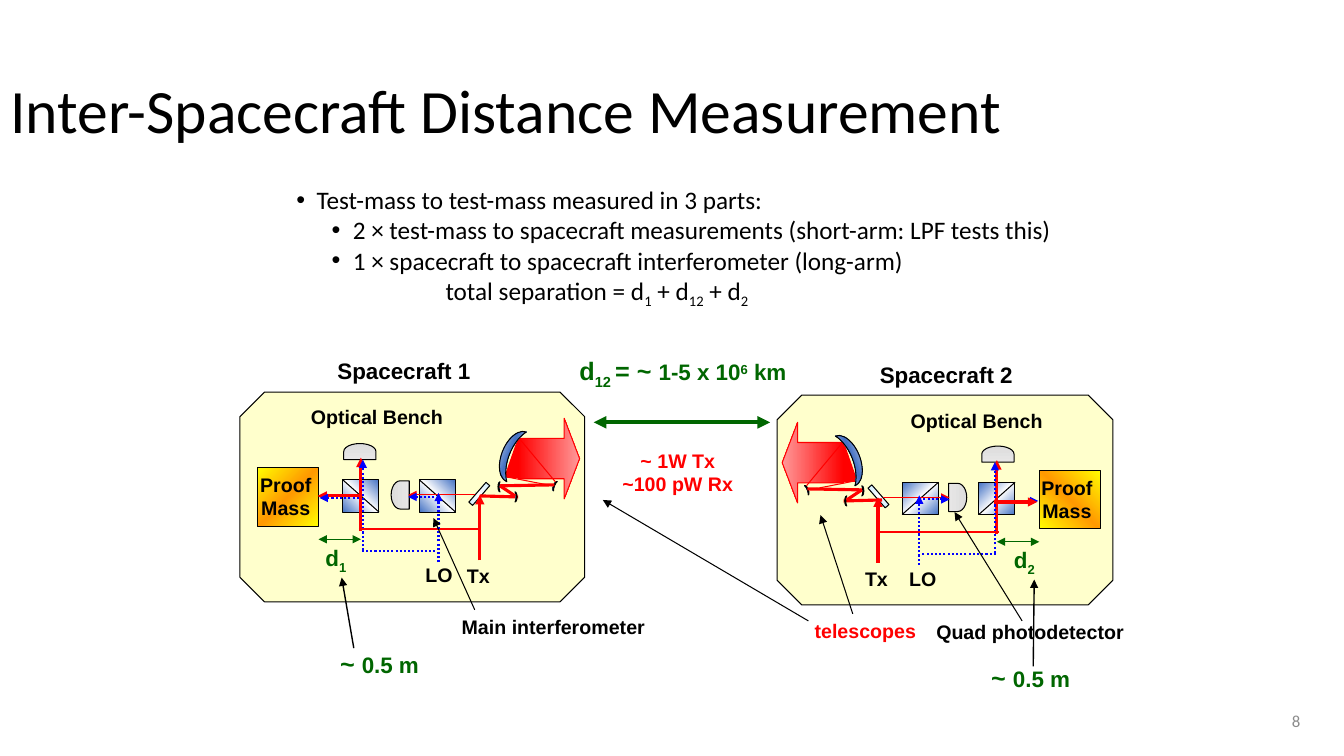
from dataclasses import dataclass

from lxml.etree import SubElement
from pptx import Presentation
from pptx.dml.color import RGBColor
from pptx.enum.dml import MSO_LINE
from pptx.enum.shapes import MSO_CONNECTOR, MSO_SHAPE
from pptx.enum.text import MSO_ANCHOR, MSO_AUTO_SIZE, PP_ALIGN
from pptx.oxml.ns import qn
from pptx.util import Inches, Length, Pt

CELL = 0.1  # grid of 133.3 columns by 75 rows, in inches


@dataclass(frozen=True)
class Theme:
    ink: str = "000000"
    red: str = "FF0000"
    blue: str = "0000FF"
    green: str = "006600"
    grey: str = "8C8C8C"
    hull: str = "FFFFCC"
    body_font: str = "Calibri"
    label_font: str = "Arial"
    title: int = 44
    large: int = 18
    medium: int = 16
    small: int = 14
    number: int = 12


THEME = Theme()


@dataclass(frozen=True)
class Paint:
    colors: tuple[str, ...]
    angle: int = 0


@dataclass(frozen=True)
class Stroke:
    color: str
    width: float = 0.75
    tail: bool = False
    head: bool = False
    dotted: bool = False


@dataclass(frozen=True)
class Beam:
    start: tuple[float, float]
    end: tuple[float, float]
    stroke: Stroke


@dataclass(frozen=True)
class Part:
    kind: MSO_SHAPE
    box: tuple[float, float, float, float]
    paint: Paint
    outline: str | None = THEME.ink
    turn: float = 0
    flip: bool = False
    adjust: tuple[float, ...] = ()


@dataclass(frozen=True)
class Span:
    text: str
    size: int | None = None
    baseline: int = 0


@dataclass(frozen=True)
class Label:
    box: tuple[float, float, float, float]
    lines: tuple[tuple[Span, ...], ...]
    color: str = THEME.ink
    size: int = THEME.small
    align: PP_ALIGN = PP_ALIGN.CENTER
    font: str = THEME.label_font
    bold: bool = True
    wrap: bool = True
    anchor: MSO_ANCHOR = MSO_ANCHOR.TOP


@dataclass(frozen=True)
class View:
    """Where a group is drawn: mirrored in x about axis / 2 and lowered by drop."""
    axis: float | None = None
    drop: float = 0


STEEL = Paint(("E7E6E6", "DDDDDD"))
GOLD = Paint(("FFFF00", "FF9900", "FFFF00"), 45)
GLASS = Paint(("4472C4", "FFFFFF", "4472C4"), 315)
MIRROR = Paint(("FFFFFF", "4472C4", "FFFFFF"))
PLATE = Paint(("CCECFF", "FFFFFF", "CCECFF"), 90)
GLOW = Paint(("FF0000", "FF9999"))

EDGE, POINTER = Stroke(THEME.ink), Stroke(THEME.ink, tail=True)
RANGE_POINTER = Stroke(THEME.ink, 1, tail=True)
RAY, RAY_ARROW = Stroke(THEME.red), Stroke(THEME.red, tail=True)
LASER, LASER_ARROW = Stroke(THEME.red, 2.25), Stroke(THEME.red, 2.25, tail=True)
LASER_FEED = Stroke(THEME.red, 1.5)
LOCAL = Stroke(THEME.blue, 1.5, dotted=True)
LOCAL_ARROW = Stroke(THEME.blue, 1.5, tail=True, dotted=True)
SHORT_ARM = Stroke(THEME.green, tail=True, head=True)
LONG_ARM = Stroke(THEME.green, 3, tail=True, head=True)

DELAY, MOON = MSO_SHAPE.FLOWCHART_DELAY, MSO_SHAPE.MOON
BENCH: list[Part | Beam] = [
    Part(MSO_SHAPE.RECTANGLE, (47.3, 47.7, 0.5, 2.6), PLATE, turn=41),
    Part(DELAY, (38.8, 47.7, 1.8, 2.8), STEEL, turn=180),
    Part(DELAY, (34.9, 43.2, 1.6, 3.2), STEEL, turn=270),
    Part(MSO_SHAPE.RECTANGLE, (25.5, 46.4, 6.1, 5.8), GOLD),
    *(item for left in (34, 41.6) for item in (
        Part(MSO_SHAPE.RECTANGLE, (left, 47.6, 3.6, 3.2), GLASS),
        Beam((left, 47.6), (left + 3.6, 50.8), EDGE))),
    Beam((47.6, 55.6), (47.6, 49.1), LASER_ARROW),
    Beam((35.8, 52.7), (35.8, 45.4), LASER_ARROW),
    Beam((36, 54.6), (36, 45.6), LOCAL_ARROW),
    Beam((47.1, 49.1), (40.5, 49.1), RAY_ARROW),
    Beam((35.6, 52.5), (47.4, 52.5), LASER_FEED),
    Beam((43.5, 55.8), (43.5, 48.9), LOCAL_ARROW),
    Beam((35.9, 54.7), (43.4, 54.7), LOCAL),
    Beam((43.1, 49.3), (40.5, 49.3), LOCAL_ARROW),
    Beam((31.6, 53.5), (35.8, 53.5), SHORT_ARM),
]
TELESCOPE: list[Part | Beam] = [
    Part(MSO_SHAPE.RIGHT_ARROW, (51.4, 41.5, 6.1, 8), GLOW, THEME.red, adjust=(0.5, 0.25)),
    Part(MOON, (54.9, 47.7, 0.2, 1), MIRROR, turn=21.5),
    Beam((51.6, 43.6), (55.1, 47.8), RAY),
    Beam((50.2, 47.3), (54.8, 48.2), RAY),
    Beam((47.6, 49.2), (51.4, 49.3), LASER),
    Part(MOON, (51.1, 48.8, 0.2, 1), MIRROR, flip=True),
    Part(MOON, (49.4, 47.8, 0.2, 1), MIRROR),
    Beam((49.6, 48.2), (51.1, 49.2), LASER),
    Beam((49.6, 48.2), (55, 48.1), LASER),
    Part(MSO_SHAPE.RIGHT_TRIANGLE, (50, 43.4, 1.4, 4), Paint((THEME.red,)), None, flip=True),
    Part(MOON, (49.8, 42.4, 1.5, 5.3), MIRROR, turn=21.5),
]
HULLS = [Part(MSO_SHAPE.OCTAGON, box, Paint((THEME.hull,)), adjust=(0.117,))
         for box in ((23.8, 38.9, 34.2, 20.8), (77.1, 39.2, 33.3, 20.8))]
PROOF_BEAMS = [
    Beam((35.8, 49.2), (31.5, 49.2), LASER_ARROW), Beam((35.6, 49.4), (31.7, 49.4), LOCAL_ARROW),
    Beam((99.1, 49.7), (103, 49.7), LOCAL_ARROW), Beam((98.6, 49.8), (102.9, 49.8), LASER_ARROW),
]
CALLOUTS = [
    Beam((58.9, 41.9), (76.4, 41.9), LONG_ARM), Beam((47.1, 60.5), (43, 51.4), POINTER),
    Beam((80.2, 61.6), (59.8, 49.6), POINTER), Beam((84.6, 60.9), (81.4, 51.1), POINTER),
    Beam((101.4, 61.6), (94.7, 50.8), POINTER), Beam((35.1, 64.3), (33.9, 57.3), RANGE_POINTER),
    Beam((102.5, 66.1), (102.6, 57.5), RANGE_POINTER),
]


def words(*lines: str) -> tuple[tuple[Span, ...], ...]:
    return tuple((Span(line),) for line in lines)


LABELS = [
    Label((53.9, 34.8, 27.7, 5.8), ((Span("d"), Span("12 ", baseline=-25), Span("= ~ "),
          Span("1-5 x 10", THEME.medium), Span("6", THEME.medium, 30),
          Span(" km", THEME.medium)),), THEME.green, THEME.large),
    Label((41, 60.5, 27.8, 6), words("Main interferometer")),
    Label((91.2, 61, 22, 3.3), words("Quad photodetector")),
    Label((79.6, 60.9, 12.5, 3.4), words("telescopes"), THEME.red),
    Label((60.6, 44, 13.3, 3.5), words("~ 1W Tx", "~100 pW Rx"), THEME.red),
    *(Label((left, top, 15.4, 3.7), words(f"Spacecraft {craft}"), size=THEME.medium,
            align=PP_ALIGN.LEFT, wrap=False)
      for craft, left, top in ((1, 32.5, 34.9), (2, 86.3, 35.3))),
    *(Label((left, top, 4.6, 3.6), ((Span("d"), Span(craft, baseline=-25)),), THEME.green,
            THEME.medium, PP_ALIGN.LEFT)
      for craft, left, top in (("1", 31.3, 53.5), ("2", 99.6, 53.7))),
    *(Label((left, top, 9.1, 5.5), words("Proof Mass")) for left, top in ((23.8, 46.4), (101.3, 46.7))),
    *(Label((left, top, 16, 3.9), words("Optical Bench")) for left, top in ((29.4, 39.7), (88.9, 40.1))),
    *(Label((left, top, 11.1, 3.4), words(name)) for name, left, top in (
        ("LO", 38, 55.4), ("Tx", 41.9, 55.5), ("Tx", 81.4, 55.8), ("LO", 86, 55.8))),
    *(Label((left, top, 10.3, 5.8), ((Span("~ "), Span("0.5 m", THEME.medium)),), THEME.green,
            THEME.large) for left, top in ((32.5, 63.8), (97.1, 65.2))),
    Label((100, 69.5, 30, 4), words("8"), THEME.grey, THEME.number, PP_ALIGN.RIGHT,
          THEME.body_font, False, anchor=MSO_ANCHOR.MIDDLE),
]


def grid(*cells: float) -> list[Length]:
    return [Inches(cell * CELL) for cell in cells]


def rgb(color: str) -> RGBColor:
    return RGBColor.from_string(color)


def apply_paint(fill, paint: Paint) -> None:
    if len(paint.colors) == 1:
        fill.solid()
        fill.fore_color.rgb = rgb(paint.colors[0])
        return
    fill.gradient()
    fill.gradient_angle = -paint.angle % 360
    stops = fill._xPr.find(qn("a:gradFill")).find(qn("a:gsLst"))
    for stop in list(stops):
        stops.remove(stop)
    for index, color in enumerate(paint.colors):
        position = 100000 * index // (len(paint.colors) - 1)
        stop = SubElement(stops, qn("a:gs"), pos=str(position))
        SubElement(stop, qn("a:srgbClr"), val=color)


def draw_part(slide, part: Part, view: View) -> None:
    left, top, width, height = part.box
    mirrored = view.axis is not None
    if mirrored:
        left = view.axis - left - width
    shape = slide.shapes.add_shape(part.kind, *grid(left, top + view.drop, width, height))
    shape.shadow.inherit = False
    for index, value in enumerate(part.adjust):
        shape.adjustments[index] = value
    apply_paint(shape.fill, part.paint)
    if part.outline:
        shape.line.color.rgb, shape.line.width = rgb(part.outline), Pt(0.75)
    else:
        shape.line.fill.background()
    shape.rotation = -part.turn % 360 if mirrored else part.turn
    if part.flip != mirrored:
        shape._element.spPr.xfrm.set("flipH", "1")


def draw_beam(slide, beam: Beam, view: View) -> None:
    points = [(x if view.axis is None else view.axis - x, y + view.drop)
              for x, y in (beam.start, beam.end)]
    line = slide.shapes.add_connector(MSO_CONNECTOR.STRAIGHT, *grid(*points[0], *points[1]))
    stroke = beam.stroke
    line.line.color.rgb, line.line.width = rgb(stroke.color), Pt(stroke.width)
    if stroke.dotted:
        line.line.dash_style = MSO_LINE.ROUND_DOT
    for shown, tag in ((stroke.head, "a:headEnd"), (stroke.tail, "a:tailEnd")):
        if shown:
            SubElement(line.line._get_or_add_ln(), qn(tag), type="triangle")
    SubElement(line._element.spPr, qn("a:effectLst"))


def draw_group(slide, items: list, view: View = View()) -> None:
    for item in items:
        (draw_part if isinstance(item, Part) else draw_beam)(slide, item, view)


def write_spans(para, spans: tuple[Span, ...]) -> None:
    for span in spans:
        run = para.add_run()
        run.text = span.text
        if span.size:
            run.font.size = Pt(span.size)
        if span.baseline:
            run.font._element.set("baseline", str(span.baseline * 1000))


def style(para, font: str, size: int, color: str, bold: bool = False) -> None:
    para.font.name, para.font.size, para.font.bold = font, Pt(size), bold
    para.font.color.rgb = rgb(color)


def draw_label(slide, label: Label) -> None:
    frame = slide.shapes.add_textbox(*grid(*label.box)).text_frame
    frame.word_wrap, frame.vertical_anchor = label.wrap, label.anchor
    if not label.wrap:
        frame.auto_size = MSO_AUTO_SIZE.SHAPE_TO_FIT_TEXT
    for index, spans in enumerate(label.lines):
        para = frame.add_paragraph() if index else frame.paragraphs[0]
        para.alignment = label.align
        style(para, label.font, label.size, label.color, label.bold)
        write_spans(para, spans)


def move(shape, *box: float) -> None:
    shape.left, shape.top, shape.width, shape.height = grid(*box)


def write_title(slide) -> None:
    title = slide.shapes.title
    move(title, 0, 4, 115, 14.5)
    title.text_frame.text = "Inter-Spacecraft Distance Measurement"
    title.text_frame.vertical_anchor = MSO_ANCHOR.MIDDLE
    title.text_frame.auto_size = MSO_AUTO_SIZE.NONE
    para = title.text_frame.paragraphs[0]
    para.alignment, para.line_spacing = PP_ALIGN.LEFT, 0.9
    style(para, THEME.body_font, THEME.title, THEME.ink)


def write_body(slide) -> None:
    body = slide.placeholders[1]
    move(body, 28.4, 17.8, 86.6, 13.1)
    body.text_frame.auto_size = MSO_AUTO_SIZE.NONE
    total = (Span("total separation = d"), Span("1", baseline=-25), Span(" + d"),
             Span("12", baseline=-25), Span(" + d"), Span("2", baseline=-25))
    texts = words("Test-mass to test-mass measured in 3 parts:",
                  "2 × test-mass to spacecraft measurements (short-arm: LPF tests this)",
                  "1 × spacecraft to spacecraft interferometer (long-arm)") + (total,)
    layout = ((0, 2, -2, "•"), (1, 5.6, -2.1, "•"), (1, 5.6, -2.1, "•"), (1, 14.8, 0, None))
    for index, (spans, (level, margin, indent, bullet)) in enumerate(zip(texts, layout)):
        para = body.text_frame.add_paragraph() if index else body.text_frame.paragraphs[0]
        para.level, para.space_before, para.line_spacing = level, Pt(0), 1.0
        style(para, THEME.body_font, THEME.large, THEME.ink)
        properties = para._p.get_or_add_pPr()
        for name, value in zip(("marL", "indent"), grid(margin, indent)):
            properties.set(name, str(int(value)))
        mark = properties.find(qn("a:defRPr"))
        bullet_element = SubElement(properties, qn("a:buChar" if bullet else "a:buNone"))
        if bullet:
            bullet_element.set("char", bullet)
        mark.addprevious(bullet_element)
        write_spans(para, spans)


def main() -> None:
    deck = Presentation()
    deck.slide_width, deck.slide_height = grid(133.33, 75)
    slide = deck.slides.add_slide(deck.slide_layouts[1])
    write_title(slide)
    write_body(slide)
    draw_group(slide, HULLS)
    for bench, telescope in ((View(), View()), (View(134.7, 0.25), View(135.1, 0.4))):
        draw_group(slide, BENCH, bench)
        draw_group(slide, TELESCOPE, telescope)
    draw_group(slide, PROOF_BEAMS + CALLOUTS)
    for label in LABELS:
        draw_label(slide, label)
    deck.save("out.pptx")


if __name__ == "__main__":
    main()
